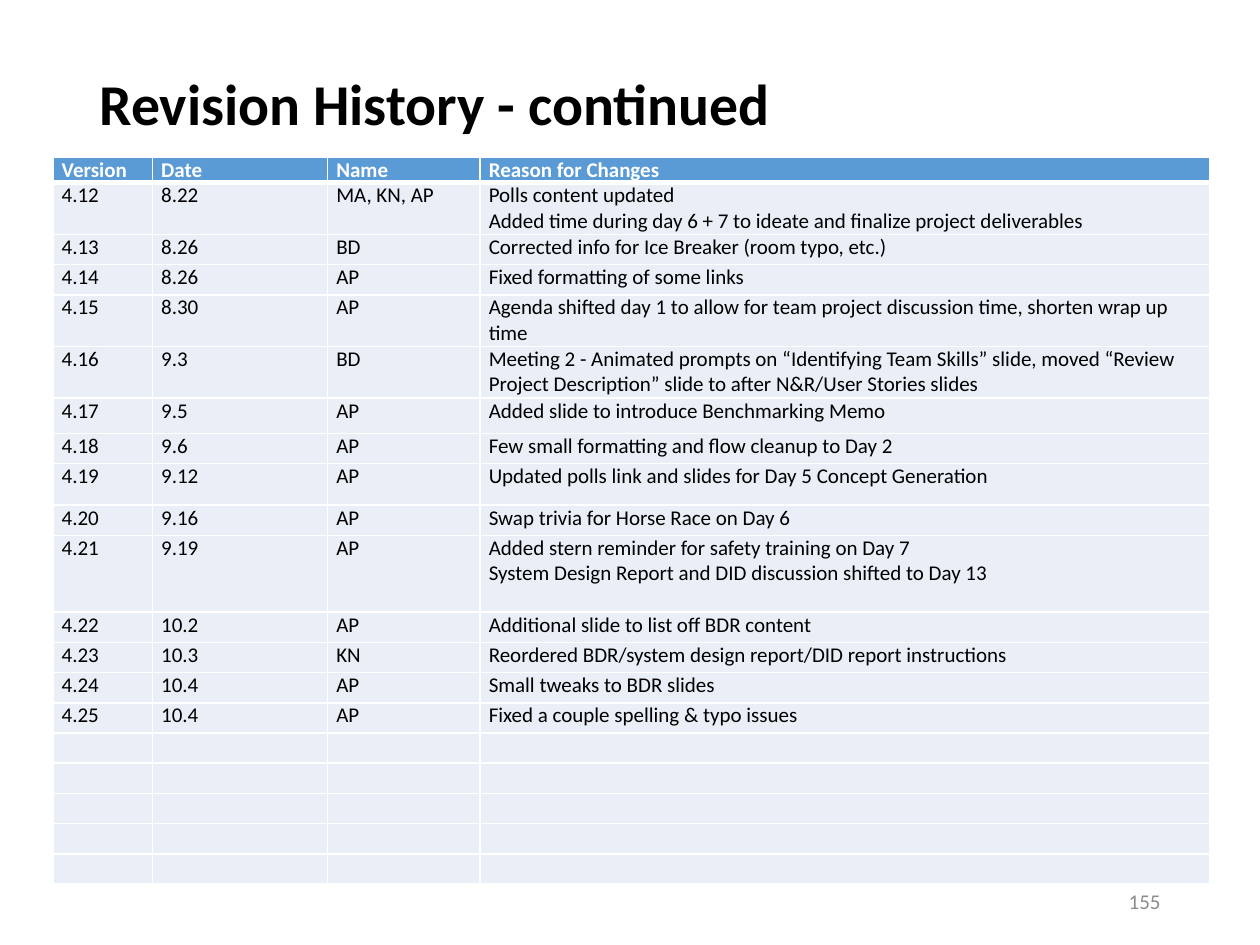
from lxml.etree import SubElement
from pptx import Presentation
from pptx.dml.color import RGBColor
from pptx.enum.text import MSO_ANCHOR, PP_ALIGN
from pptx.oxml import parse_xml
from pptx.oxml.ns import nsdecls, qn
from pptx.util import Inches, Pt

FONT = "Calibri"
BLACK = RGBColor(0x00, 0x00, 0x00)
WHITE = RGBColor(0xFF, 0xFF, 0xFF)
GRAY = RGBColor(0x8C, 0x8C, 0x8C)
HEADER_BLUE = RGBColor(0x5B, 0x9B, 0xD5)
ROW_BLUE = RGBColor(0xEA, 0xEF, 0xF7)

HEADER = ("Version", "Date", "Name", "Reason for Changes")
COL_WIDTHS = (0.79, 1.39, 1.21, 5.79)
HEADER_HEIGHT, ROW_HEIGHT, TWO_LINES = 0.2, 0.24, 0.41
EMPTY_ROWS = 5

# Version, date, name, reason, row height
REVISIONS = [
    ("4.12", "8.22", "MA, KN, AP",
     "Polls content updated\n"
     "Added time during day 6 + 7 to ideate and finalize project deliverables", TWO_LINES),
    ("4.13", "8.26", "BD", "Corrected info for Ice Breaker (room typo, etc.)", ROW_HEIGHT),
    ("4.14", "8.26", "AP", "Fixed formatting of some links", ROW_HEIGHT),
    ("4.15", "8.30", "AP",
     "Agenda shifted day 1 to allow for team project discussion time, "
     "shorten wrap up time", TWO_LINES),
    ("4.16", "9.3", "BD",
     "Meeting 2 - Animated prompts on “Identifying Team Skills” slide, moved “Review "
     "Project Description” slide to after N&R/User Stories slides", TWO_LINES),
    ("4.17", "9.5", "AP", "Added slide to introduce Benchmarking Memo", 0.28),
    ("4.18", "9.6", "AP", "Few small formatting and flow cleanup to Day 2", ROW_HEIGHT),
    ("4.19", "9.12", "AP", "Updated polls link and slides for Day 5 Concept Generation", 0.33),
    ("4.20", "9.16", "AP", "Swap trivia for Horse Race on Day 6", ROW_HEIGHT),
    ("4.21", "9.19", "AP",
     "Added stern reminder for safety training on Day 7\n"
     "System Design Report and DID discussion shifted to Day 13", 0.61),
    ("4.22", "10.2", "AP", "Additional slide to list off BDR content", ROW_HEIGHT),
    ("4.23", "10.3", "KN", "Reordered BDR/system design report/DID report instructions", ROW_HEIGHT),
    ("4.24", "10.4", "AP", "Small tweaks to BDR slides", ROW_HEIGHT),
    ("4.25", "10.4", "AP", "Fixed a couple spelling & typo issues", ROW_HEIGHT),
]


def style_paragraph(p, size, color, bold=False):
    p.font.name, p.font.size, p.font.bold = FONT, Pt(size), bold
    p.font.color.rgb = color


def add_text(slide, box, text, size, color, bold=False, align=PP_ALIGN.LEFT):
    tf = slide.shapes.add_textbox(*map(Inches, box)).text_frame
    tf.word_wrap = True
    tf.vertical_anchor = MSO_ANCHOR.MIDDLE
    p = tf.paragraphs[0]
    p.text, p.alignment = text, align
    style_paragraph(p, size, color, bold)
    return p


def set_borders(cell, bottom):
    tc_pr = cell._tc.get_or_add_tcPr()
    for i, (side, width) in enumerate((("L", 1), ("R", 1), ("T", 1), ("B", bottom))):
        tc_pr.insert(i, parse_xml(
            f'<a:ln{side} {nsdecls("a")} w="{Pt(width)}"><a:solidFill>'
            f'<a:srgbClr val="{WHITE}"/></a:solidFill></a:ln{side}>'))


def fill_cell(cell, text, is_header, bottom):
    cell.margin_left = cell.margin_right = Inches(0.07)
    cell.margin_top = cell.margin_bottom = 0
    cell.fill.solid()
    cell.fill.fore_color.rgb = HEADER_BLUE if is_header else ROW_BLUE
    set_borders(cell, bottom)
    cell.text = text
    for p in cell.text_frame.paragraphs:
        style_paragraph(p, 12, WHITE if is_header else BLACK, is_header)
        if not text:  # keeps empty rows at their set height
            SubElement(p._p, qn("a:endParaRPr"), sz="1200")


def add_revision_table(slide, box):
    rows = [(*HEADER, HEADER_HEIGHT), *REVISIONS]
    rows += [("", "", "", "", ROW_HEIGHT)] * EMPTY_ROWS
    table = slide.shapes.add_table(len(rows), len(HEADER), *map(Inches, box)).table
    table.horz_banding = False
    for col, width in zip(table.columns, COL_WIDTHS):
        col.width = Inches(width)
    for i, (*texts, height) in enumerate(rows):
        table.rows[i].height = Inches(height)
        for j, text in enumerate(texts):
            fill_cell(table.cell(i, j), text, i == 0, 3 if i == 0 else 1)


def main():
    prs = Presentation()
    prs.slide_width, prs.slide_height = Inches(10), Inches(7.5)
    slide = prs.slides.add_slide(prs.slide_layouts[6])

    # Title
    title = add_text(slide, (0.69, 0.4, 8.62, 0.9), "Revision History - continued",
                     33, BLACK, bold=True)
    title.line_spacing = 0.9
    # Revision table
    add_revision_table(slide, (0.42, 1.25, 9.17, 5.76))
    # Slide number
    add_text(slide, (7.06, 6.95, 2.25, 0.4), "155", 12, GRAY, align=PP_ALIGN.RIGHT)

    prs.save("out.pptx")


if __name__ == "__main__":
    main()
